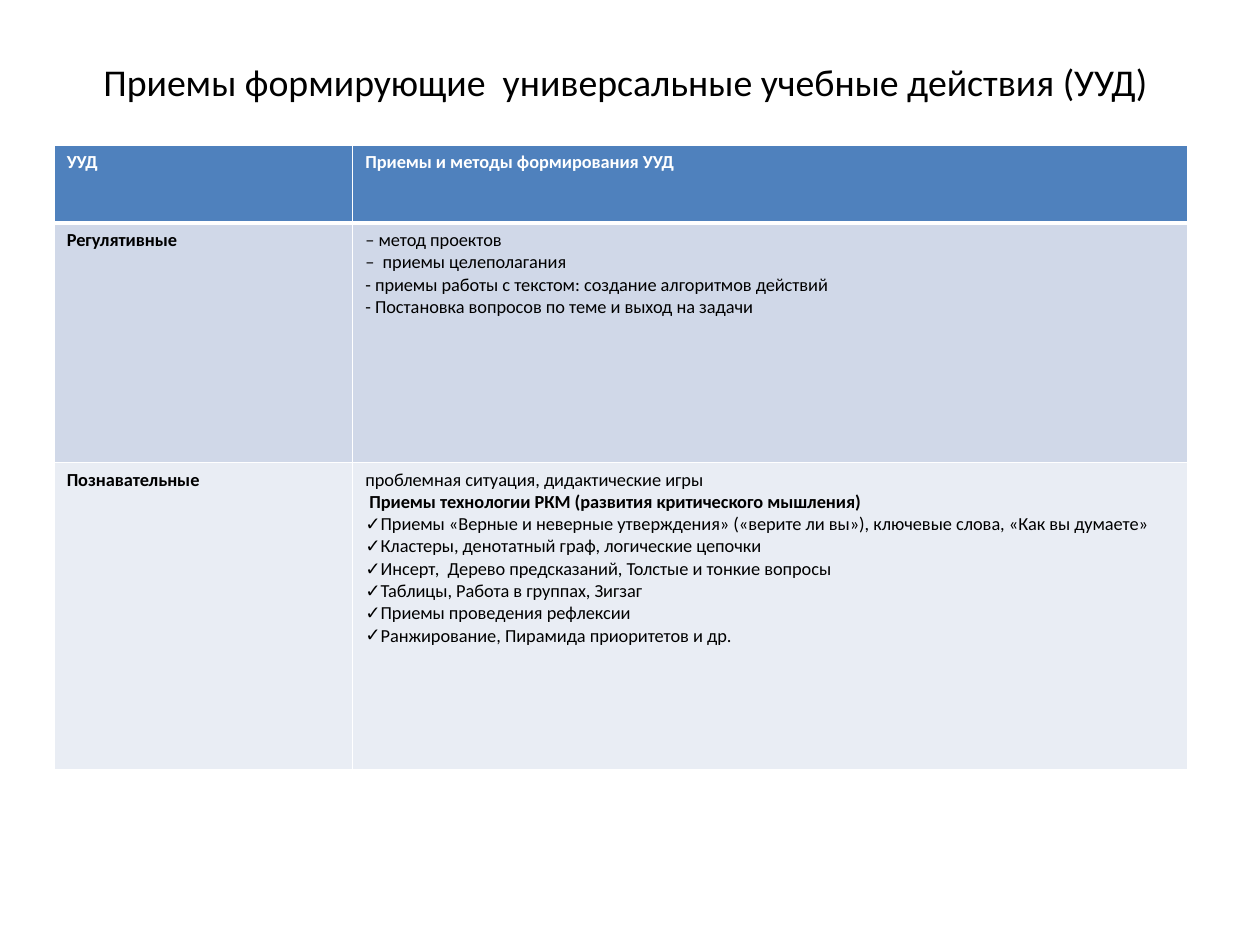
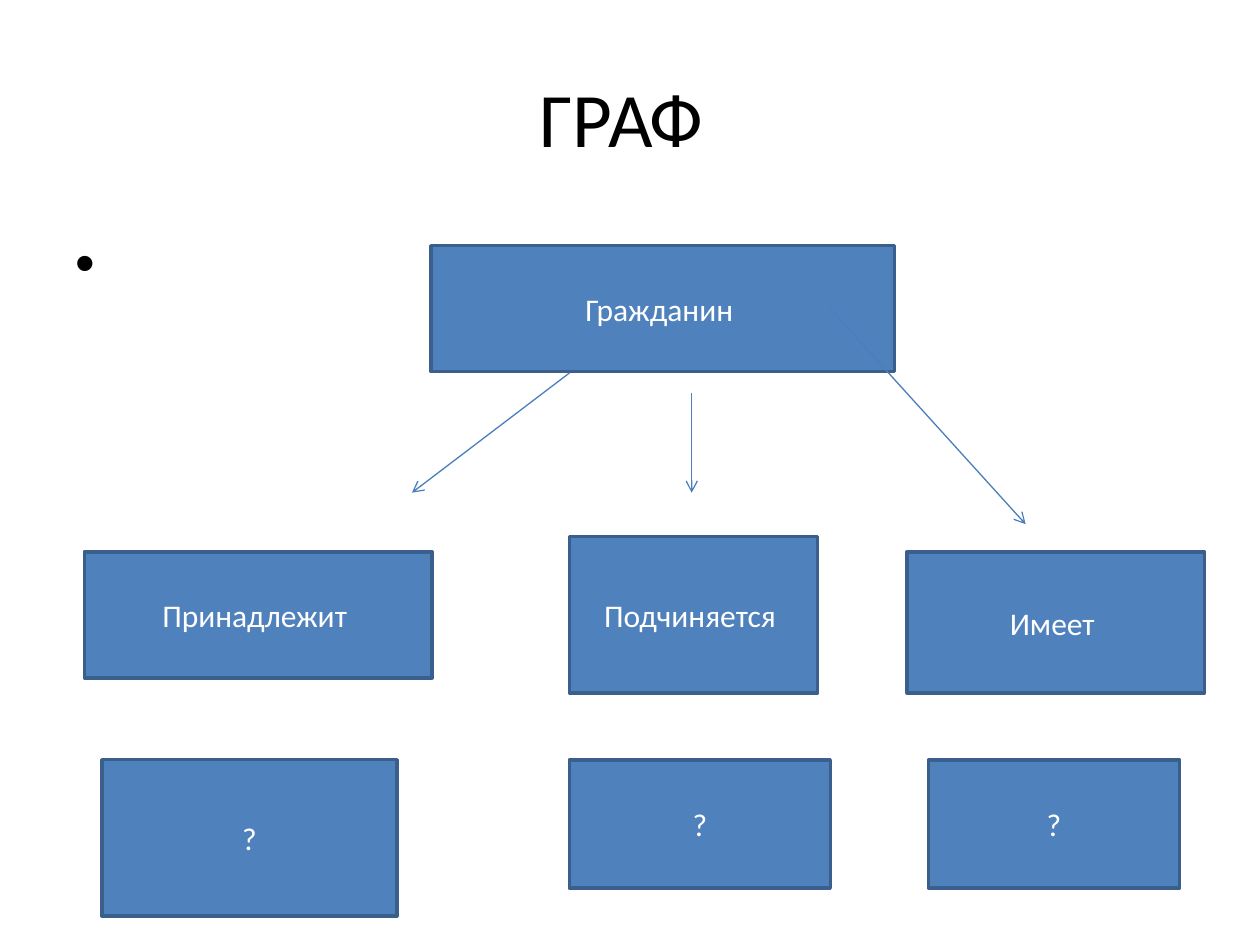
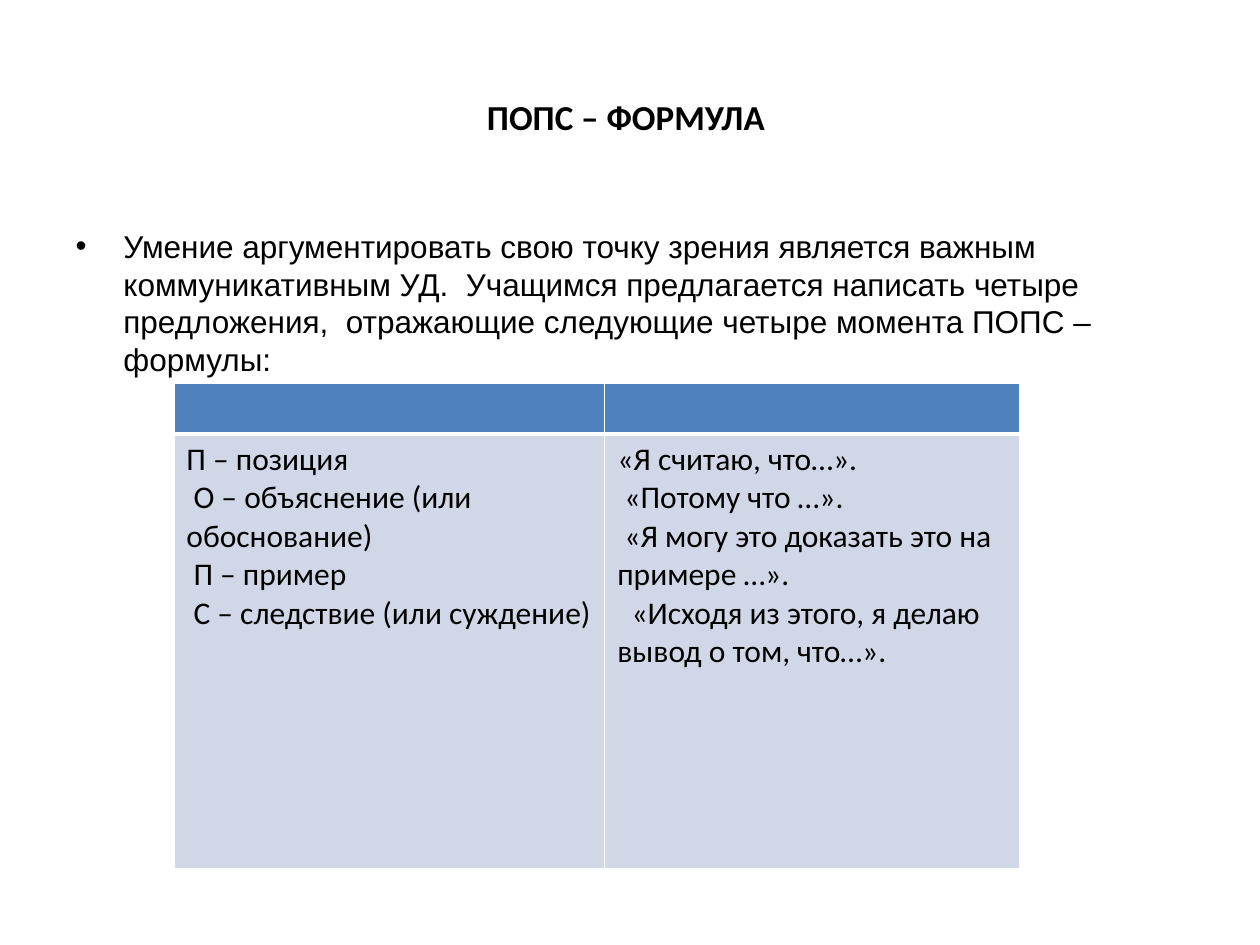
from pptx import Presentation
from pptx.dml.color import RGBColor
from pptx.enum.shapes import MSO_CONNECTOR as Connector, MSO_SHAPE as Shape
from pptx.enum.text import MSO_ANCHOR as Anchor, PP_ALIGN as Align
from pptx.oxml.ns import qn
from pptx.util import Inches, Pt
from lxml.etree import Element, SubElement

BLACK, WHITE = "000000", "FFFFFF"
BLUE, BLUE_EDGE, ARROW_BLUE = "4F81BD", "3A5F8C", "4B7EBC"
BANDS = ("D0D8E8", "E9EDF4")
TITLE_AND_BODY, TITLE_ONLY = 1, 5


def color(hex_code):
    return RGBColor.from_string(hex_code)


def style(paragraph, size, hex_code=BLACK, bold=False, font="Calibri"):
    for run in paragraph.runs:
        run.font.name = font
        run.font.size = Pt(size)
        run.font.bold = bold
        run.font.color.rgb = color(hex_code)


def set_bullet(paragraph, char, hanging=0, font="Calibri"):
    """Start the text hanging inches after char; without char, drop the bullet."""
    props = paragraph._p.get_or_add_pPr()
    props.set("marL", str(Inches(hanging)))
    props.set("indent", str(-Inches(hanging)))
    if char:
        SubElement(props, qn("a:buFont")).set("typeface", font)
        SubElement(props, qn("a:buChar")).set("char", char)
    else:
        SubElement(props, qn("a:buNone"))


def add_slide(deck, layout, title, size, bold=False, height=1.25):
    slide = deck.slides.add_slide(deck.slide_layouts[layout])
    heading = slide.shapes.title
    heading.left, heading.top = Inches(0.5), Inches(0.3)
    heading.width, heading.height = Inches(9), Inches(height)
    frame = heading.text_frame
    frame.text = title
    frame.vertical_anchor = Anchor.MIDDLE
    frame.paragraphs[0].alignment = Align.CENTER
    style(frame.paragraphs[0], size, bold=bold)
    return slide


def fill_body(slide, text, size, bullet="", hanging=0):
    body = slide.placeholders[1]
    body.left, body.top = Inches(0.5), Inches(1.75)
    body.width, body.height = Inches(9), Inches(4.95)
    body.text_frame.text = text
    item = body.text_frame.paragraphs[0]
    style(item, size, font="Arial")
    set_bullet(item, bullet, hanging, "Arial")


def underline_header(cell):
    edge = Element(qn("a:lnB"), w=str(Pt(3)))
    fill = SubElement(edge, qn("a:solidFill"))
    SubElement(fill, qn("a:srgbClr")).set("val", WHITE)
    cell._tc.get_or_add_tcPr().insert(0, edge)


def fill_cell(cell, lines, size, fill, hex_code, bold):
    """Write lines, each a text or a (bullet, text) pair."""
    cell.fill.solid()
    cell.fill.fore_color.rgb = color(fill)
    pairs = [("", line) if isinstance(line, str) else line for line in lines]
    cell.text_frame.text = "\n".join(text for _, text in pairs)
    for paragraph, (bullet, _) in zip(cell.text_frame.paragraphs, pairs):
        style(paragraph, size, hex_code, bold)
        if bullet:
            set_bullet(paragraph, bullet)


def add_grid(slide, left, top, widths, heights, rows, size, bold_labels=False):
    table = slide.shapes.add_table(
        len(heights), len(widths), Inches(left), Inches(top),
        Inches(sum(widths)), Inches(sum(heights))).table
    for column, width in zip(table.columns, widths):
        column.width = Inches(width)
    for r, (height, row) in enumerate(zip(heights, rows)):
        table.rows[r].height = Inches(height)
        header = r == 0
        fill = BLUE if header else BANDS[(r - 1) % 2]
        for c, lines in enumerate(row):
            cell = table.cell(r, c)
            fill_cell(cell, lines, size, fill, WHITE if header else BLACK,
                      header or (bold_labels and c == 0))
            if header:
                underline_header(cell)
    return table


def add_node(slide, text, left, top, width, height):
    node = slide.shapes.add_shape(
        Shape.RECTANGLE, Inches(left), Inches(top), Inches(width), Inches(height))
    node.shadow.inherit = False
    node.fill.solid()
    node.fill.fore_color.rgb = color(BLUE)
    node.line.color.rgb = color(BLUE_EDGE)
    node.line.width = Pt(2)
    frame = node.text_frame
    frame.text = text
    frame.word_wrap = True
    frame.vertical_anchor = Anchor.MIDDLE
    frame.paragraphs[0].alignment = Align.CENTER
    style(frame.paragraphs[0], 18, WHITE)


def add_arrow(slide, *ends):
    arrow = slide.shapes.add_connector(Connector.STRAIGHT, *map(Inches, ends))
    arrow.line.color.rgb = color(ARROW_BLUE)
    arrow.line.width = Pt(0.75)
    SubElement(arrow.line._get_or_add_ln(), qn("a:tailEnd")).set("type", "arrow")
    SubElement(arrow._element.spPr, qn("a:effectLst"))


def build_methods(deck):
    slide = add_slide(
        deck, TITLE_ONLY,
        "Приемы формирующие  универсальные учебные действия (УУД) ", 21.6, height=0.69)
    thinking_title = " Приемы технологии РКМ (развития критического мышления)"
    thinking_methods = (
        "Приемы «Верные и неверные утверждения» («верите ли вы»), "
        "ключевые слова, «Как вы думаете»",
        "Кластеры, денотатный граф, логические цепочки",
        "Инсерт,  Дерево предсказаний, Толстые и тонкие вопросы",
        "Таблицы, Работа в группах, Зигзаг",
        "Приемы проведения рефлексии",
        "Ранжирование, Пирамида приоритетов и др.",
    )
    rows = (
        (["УУД"], ["Приемы и методы формирования УУД"]),
        (["Регулятивные"],
         ["– метод проектов",
          "–  приемы целеполагания",
          "- приемы работы с текстом: создание алгоритмов действий",
          ("-", " Постановка вопросов по теме и выход на задачи")]),
        (["Познавательные"],
         ["проблемная ситуация, дидактические игры", thinking_title,
          *(("✓", method) for method in thinking_methods)]),
    )
    table = add_grid(slide, 0.43, 1.15, (2.37, 6.63), (0.62, 1.9, 2.44),
                     rows, 10.5, bold_labels=True)
    style(table.cell(2, 1).text_frame.paragraphs[1], 10.5, bold=True)


def build_graph(deck):
    slide = add_slide(deck, TITLE_AND_BODY, "ГРАФ ", 44)
    fill_body(slide, "•", 32)
    add_node(slide, "Гражданин ", 3.42, 1.95, 3.68, 1)

    relations = (
        ("Принадлежит ", 0.67, 4.38, 2.76, 1),
        ("Подчиняется ", 4.52, 4.26, 1.97, 1.24),
        ("Имеет ", 7.2, 4.38, 2.36, 1.12),
    )
    answers = ((0.81, 2.34, 1.24), (4.52, 2.07, 1.02), (7.37, 1.99, 1.02))
    arrows = ((4.52, 2.96, 3.27, 3.91), (5.49, 3.12, 5.49, 3.91),
              (6.59, 2.45, 8.14, 4.16))
    for relation, (left, width, height), ends in zip(relations, answers, arrows):
        add_node(slide, *relation)
        add_node(slide, "?", left, 6.03, width, height)
        add_arrow(slide, *ends)


def build_formula(deck):
    slide = add_slide(deck, TITLE_AND_BODY, "ПОПС – ФОРМУЛА ", 20, bold=True)
    fill_body(
        slide,
        "Умение аргументировать свою точку зрения является важным коммуникативным УД.  "
        "Учащимся предлагается написать четыре предложения,  "
        "отражающие следующие четыре момента ПОПС – формулы:",
        18, "•", hanging=0.38)
    rows = (
        ([], []),
        (["П – позиция",
          " О – объяснение (или обоснование)",
          " П – пример",
          " С – следствие (или суждение)"],
         ["«Я считаю, что…».",
          " «Потому что …».",
          " «Я могу это доказать это на примере …».",
          "  «Исходя из этого, я делаю вывод о том, что…»."]),
    )
    add_grid(slide, 1.38, 3.04, (3.42, 3.29), (0.4, 3.45), rows, 18)


def main():
    deck = Presentation()
    deck.slide_width, deck.slide_height = Inches(10), Inches(7.5)
    build_methods(deck)
    build_graph(deck)
    build_formula(deck)
    deck.save("out.pptx")


if __name__ == "__main__":
    main()
